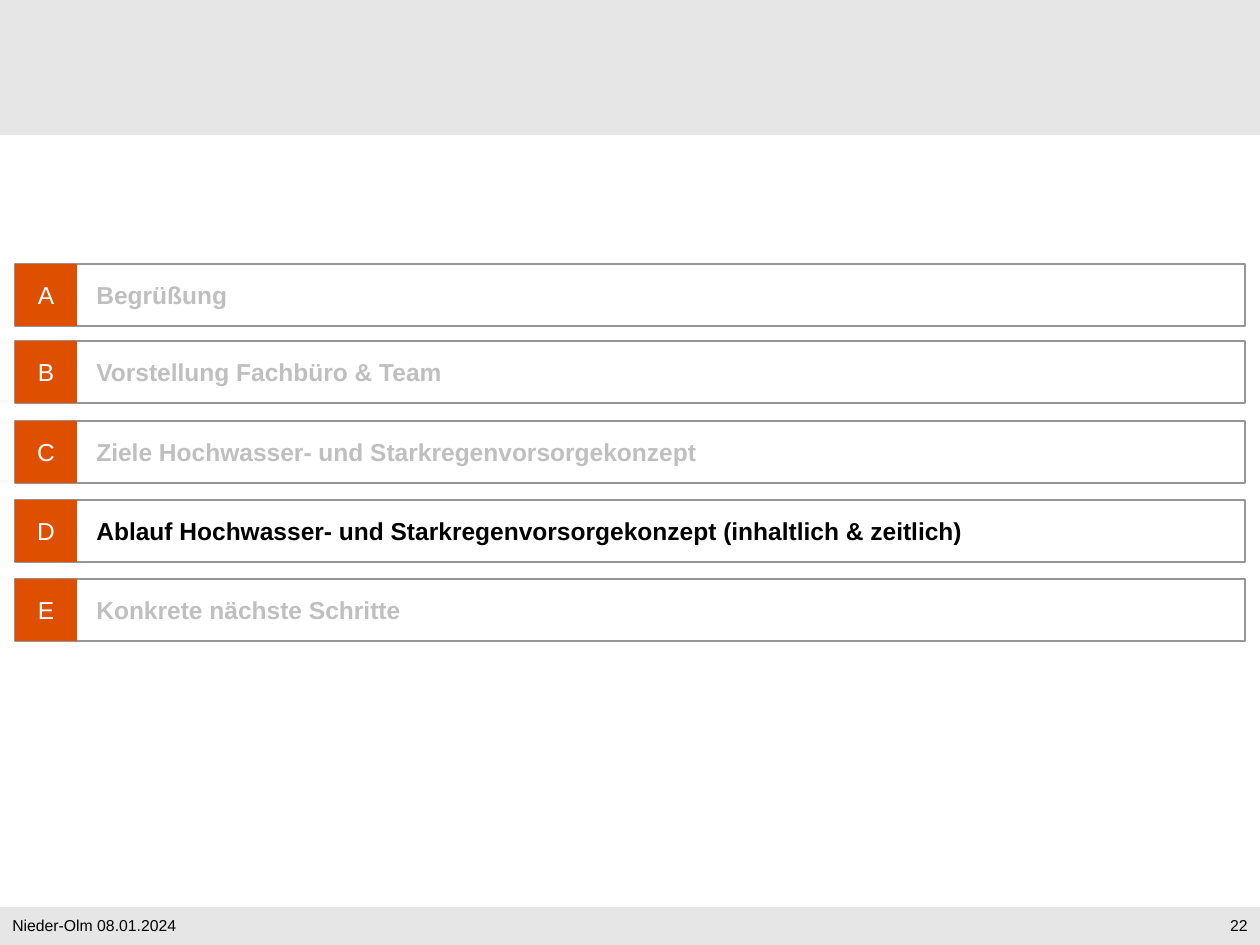
from dataclasses import dataclass

from pptx import Presentation
from pptx.dml.color import RGBColor
from pptx.enum.shapes import MSO_SHAPE
from pptx.enum.text import MSO_ANCHOR, PP_ALIGN
from pptx.util import Emu, Pt

PX_PER_INCH = 126


@dataclass(frozen=True)
class Theme:
    font: str = "Arial"
    band: str = "E6E6E6"
    accent: str = "DE5000"
    frame: str = "969696"
    muted: str = "BFBFBF"
    dark: str = "000000"
    light: str = "FFFFFF"
    agenda_size: int = 14
    footer_size: int = 9
    frame_width: float = 0.75


@dataclass(frozen=True)
class Box:
    left: int
    top: int
    width: int
    height: int

    def emu(self) -> list[Emu]:
        lengths = (self.left, self.top, self.width, self.height)
        return [px(length) for length in lengths]


@dataclass(frozen=True)
class AgendaItem:
    letter: str
    title: str
    top: int
    current: bool = False


THEME = Theme()
ROW_LEFT, ROW_WIDTH, ROW_HEIGHT = 15, 1230, 62
TITLE_LEFT, TITLE_WIDTH = 84, 1162

AGENDA = [
    AgendaItem("A", "Begrüßung", 264),
    AgendaItem("B", "Vorstellung Fachbüro & Team", 341),
    AgendaItem("C", "Ziele Hochwasser- und Starkregenvorsorgekonzept", 421),
    AgendaItem("D", "Ablauf Hochwasser- und Starkregenvorsorgekonzept (inhaltlich & zeitlich)",
               500, current=True),
    AgendaItem("E", "Konkrete nächste Schritte", 579),
]


def px(length: int) -> Emu:
    return Emu(round(length * 914400 / PX_PER_INCH))


def write_text(shape, text: str, *, size: int, color: str, bold: bool = False,
               align: PP_ALIGN = PP_ALIGN.LEFT) -> None:
    frame = shape.text_frame
    frame.word_wrap = True
    frame.vertical_anchor = MSO_ANCHOR.MIDDLE
    paragraph = frame.paragraphs[0]
    paragraph.alignment = align
    run = paragraph.add_run()
    run.text = text
    run.font.name = THEME.font
    run.font.size = Pt(size)
    run.font.bold = bold
    run.font.color.rgb = RGBColor.from_string(color)


def add_text(shapes, box: Box, text: str, **text_format) -> None:
    write_text(shapes.add_textbox(*box.emu()), text, **text_format)


def add_rectangle(shapes, box: Box, fill: str | None = None, line: str | None = None):
    shape = shapes.add_shape(MSO_SHAPE.RECTANGLE, *box.emu())
    shape.shadow.inherit = False
    if fill:
        shape.fill.solid()
        shape.fill.fore_color.rgb = RGBColor.from_string(fill)
    else:
        shape.fill.background()
    if line:
        shape.line.color.rgb = RGBColor.from_string(line)
        shape.line.width = Pt(THEME.frame_width)
    else:
        shape.line.fill.background()
    return shape


def add_agenda_row(slide, item: AgendaItem) -> None:
    shapes = slide.shapes.add_group_shape().shapes
    add_text(shapes, Box(TITLE_LEFT, item.top, TITLE_WIDTH, ROW_HEIGHT), item.title,
             size=THEME.agenda_size, bold=True,
             color=THEME.dark if item.current else THEME.muted)
    add_rectangle(shapes, Box(ROW_LEFT, item.top, ROW_WIDTH, ROW_HEIGHT), line=THEME.frame)
    badge = add_rectangle(shapes, Box(ROW_LEFT, item.top, ROW_HEIGHT, ROW_HEIGHT),
                          fill=THEME.accent)
    write_text(badge, item.letter, size=THEME.agenda_size, color=THEME.light,
               align=PP_ALIGN.CENTER)


def main() -> None:
    presentation = Presentation()
    presentation.slide_width, presentation.slide_height = px(1260), px(945)
    slide = presentation.slides.add_slide(presentation.slide_layouts[6])

    # Footer and header bands
    add_rectangle(slide.shapes, Box(0, 907, 1260, 38), fill=THEME.band)
    add_rectangle(slide.shapes, Box(0, 0, 1260, 135), fill=THEME.band)

    # Place and date, page number
    add_text(slide.shapes, Box(0, 910, 968, 30), "Nieder-Olm 08.01.2024",
             size=THEME.footer_size, color=THEME.dark)
    add_text(slide.shapes, Box(1166, 910, 94, 30), "22",
             size=THEME.footer_size, color=THEME.dark, align=PP_ALIGN.RIGHT)

    # Agenda
    for item in AGENDA:
        add_agenda_row(slide, item)

    presentation.save("out.pptx")


if __name__ == "__main__":
    main()
